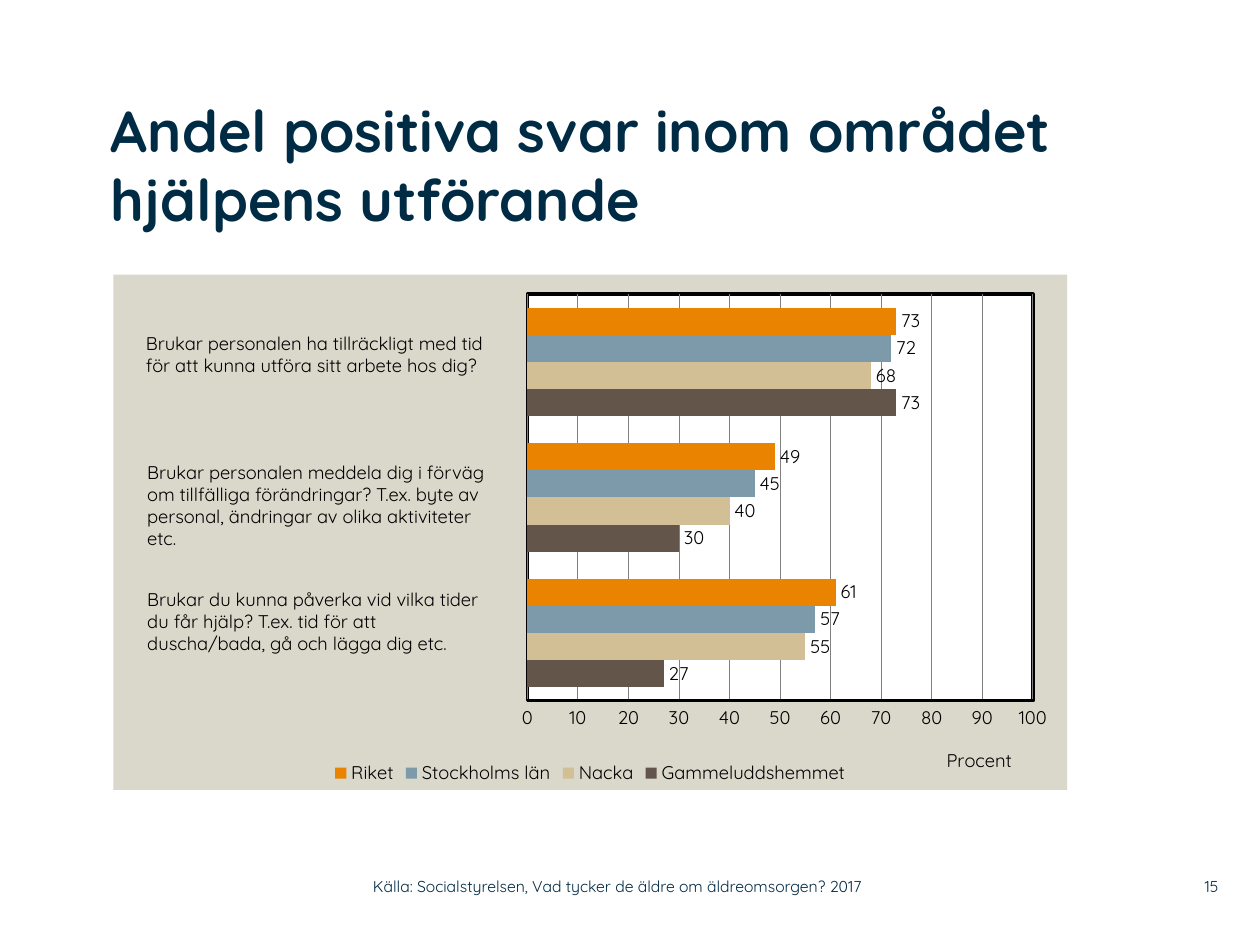
from lxml.etree import fromstring
from pptx import Presentation
from pptx.chart.data import CategoryChartData
from pptx.dml.color import RGBColor
from pptx.enum.chart import XL_CHART_TYPE, XL_LABEL_POSITION, XL_LEGEND_POSITION, XL_TICK_MARK
from pptx.enum.text import MSO_ANCHOR, MSO_AUTO_SIZE, PP_ALIGN
from pptx.util import Inches, Pt

BLACK = RGBColor(0x00, 0x00, 0x00)
GRAY = RGBColor(0x80, 0x80, 0x80)
NAVY = RGBColor(0x00, 0x2B, 0x45)
BROWN = RGBColor(0x63, 0x55, 0x49)
SAND = RGBColor(0xD3, 0xBF, 0x96)
BLUE = RGBColor(0x7D, 0x9A, 0xAA)
ORANGE = RGBColor(0xE9, 0x83, 0x00)
CHART_NS = "http://schemas.openxmlformats.org/drawingml/2006/chart"
DRAWING_NS = "http://schemas.openxmlformats.org/drawingml/2006/main"

SERIES = [
    ("Gammeluddshemmet", (27, 30, 73), BROWN),
    ("Nacka", (55, 40, 68), SAND),
    ("Stockholms län", (57, 45, 72), BLUE),
    ("Riket", (61, 49, 73), ORANGE),
]
QUESTIONS = [
    (1.06, 2.59, 2.99, 0.45, ["Brukar personalen ha tillräckligt med tid",
                              "för att kunna utföra sitt arbete hos dig?"]),
    (1.07, 3.61, 2.97, 0.81, ["Brukar personalen meddela dig i förväg om tillfälliga förändringar? "
                              "T.ex. byte av personal, ändringar av olika aktiviteter etc."]),
    (1.07, 4.62, 2.97, 0.63, ["Brukar du kunna påverka vid vilka tider",
                              "du får hjälp? T.ex. tid för att",
                              "duscha/bada, gå och lägga dig etc."]),
]


class SlideBuilder:
    """Holds the style and the current slide, and adds its elements."""

    font_name = "Quicksand"
    body_size = 10.5

    def __init__(self, slide):
        self.slide = slide

    def style(self, font, size=body_size, color=BLACK, bold=False):
        font.name, font.size, font.bold = self.font_name, Pt(size), bold
        font.color.rgb = color

    def text(self, left, top, width, height, lines, size=body_size, color=BLACK, bold=False,
             align=PP_ALIGN.LEFT, anchor=MSO_ANCHOR.TOP, inset=False):
        box = self.slide.shapes.add_textbox(*map(Inches, (left, top, width, height)))
        frame = box.text_frame
        frame.word_wrap = True
        frame.vertical_anchor = anchor
        if inset:
            frame.auto_size = MSO_AUTO_SIZE.SHAPE_TO_FIT_TEXT
        else:
            frame.margin_left = frame.margin_top = frame.margin_right = frame.margin_bottom = 0
        frame.text = "\n".join(lines)
        for paragraph in frame.paragraphs:
            paragraph.alignment = align
            self.style(paragraph.font, size, color, bold)

    def layout(self, **values):
        items = "".join(f'<c:{key} val="{value}"/>' for key, value in values.items())
        return fromstring(f'<c:layout xmlns:c="{CHART_NS}"><c:manualLayout>{items}'
                          '</c:manualLayout></c:layout>')

    def fill(self, color, line=""):
        return fromstring(f'<c:spPr xmlns:c="{CHART_NS}" xmlns:a="{DRAWING_NS}"><a:solidFill>'
                          f'<a:srgbClr val="{color}"/></a:solidFill>{line}</c:spPr>')

    def bar_chart(self, left, top, width, height):
        data = CategoryChartData()
        data.categories = ["1", "2", "3"]
        for name, values, _ in SERIES:
            data.add_series(name, values)
        chart = self.slide.shapes.add_chart(
            XL_CHART_TYPE.BAR_CLUSTERED, *map(Inches, (left, top, width, height)), data).chart
        self.style(chart.font)
        chart.has_title = False
        chart.has_legend = True
        chart.legend.position = XL_LEGEND_POSITION.BOTTOM
        chart.legend.include_in_layout = False
        self.style(chart.legend.font)
        self.style_bars(chart.plots[0])
        self.style_axes(chart)
        self.style_areas(chart)

    def style_bars(self, plot):
        plot.gap_width = 100
        plot.overlap = 0
        plot.vary_by_categories = False
        for series, (_, _, color) in zip(plot.series, SERIES):
            series.format.fill.solid()
            series.format.fill.fore_color.rgb = color
            labels = series.data_labels
            labels.show_value = True
            labels.position = XL_LABEL_POSITION.OUTSIDE_END
            self.style(labels.font)

    def style_axes(self, chart):
        chart.category_axis.visible = False
        axis = chart.value_axis
        axis.minimum_scale, axis.maximum_scale, axis.major_unit = 0, 100, 10
        axis.major_tick_mark = XL_TICK_MARK.NONE
        axis.format.line.color.rgb = BLACK
        axis.format.line.width = Pt(2)
        axis.has_major_gridlines = True
        axis.major_gridlines.format.line.color.rgb = GRAY
        axis.major_gridlines.format.line.width = Pt(0.5)
        self.style(axis.tick_labels.font)
        frame = axis.axis_title.text_frame
        frame.text = "Procent"
        self.style(frame.paragraphs[0].font)
        title = axis.axis_title._element
        for old in title.findall(f"{{{CHART_NS}}}layout"):
            title.remove(old)
        title.find(f"{{{CHART_NS}}}tx").addnext(
            self.layout(xMode="edge", yMode="edge", x=0.87, y=0.91))

    def style_areas(self, chart):
        plot_area = chart._chartSpace.chart.plotArea
        for old in plot_area.findall(f"{{{CHART_NS}}}layout"):
            plot_area.remove(old)
        plot_area.insert(0, self.layout(layoutTarget="inner", xMode="edge", yMode="edge",
                                        x=0.434, y=0.038, w=0.53, h=0.789))
        border = '<a:ln w="25400"><a:solidFill><a:srgbClr val="000000"/></a:solidFill></a:ln>'
        plot_area.append(self.fill("FFFFFF", border))
        chart._chartSpace.chart.addnext(self.fill("DAD7CB", "<a:ln><a:noFill/></a:ln>"))


def main():
    presentation = Presentation()
    presentation.slide_width, presentation.slide_height = Inches(10), Inches(7.5)
    builder = SlideBuilder(presentation.slides.add_slide(presentation.slide_layouts[6]))
    builder.bar_chart(0.9, 2.18, 7.57, 4.09)
    builder.text(0.88, 0.75, 7.6, 1.42, ["Andel positiva svar inom området hjälpens utförande"],
                 size=33, color=NAVY, bold=True)
    for left, top, width, height, lines in QUESTIONS:
        builder.text(left, top, width, height, lines, inset=True)
    builder.text(9.2, 6.89, 0.47, 0.29, ["15"], size=9, color=NAVY,
                 align=PP_ALIGN.RIGHT, anchor=MSO_ANCHOR.MIDDLE)
    builder.text(2.96, 6.89, 4.43, 0.29,
                 ["Källa: Socialstyrelsen, Vad tycker de äldre om äldreomsorgen? 2017"],
                 size=9, color=NAVY, anchor=MSO_ANCHOR.MIDDLE)
    presentation.save("out.pptx")


if __name__ == "__main__":
    main()
